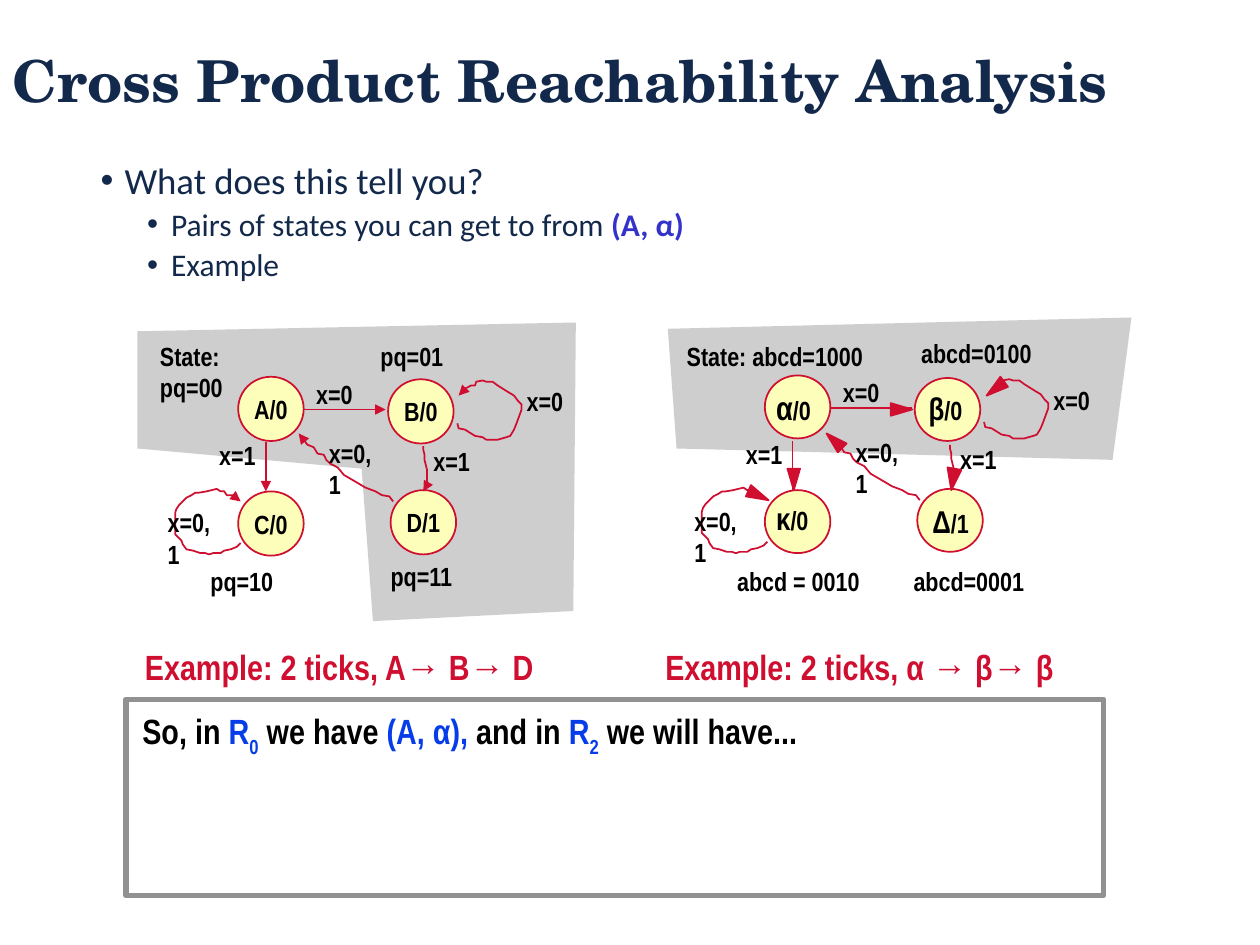
from pptx import Presentation
from pptx.dml.color import RGBColor
from pptx.enum.shapes import MSO_CONNECTOR, MSO_SHAPE
from pptx.enum.text import MSO_ANCHOR, MSO_AUTO_SIZE, PP_ALIGN
from pptx.oxml.ns import qn
from pptx.util import Pt
from lxml.etree import SubElement

PX = 9144
HUE = {"navy": "13294B", "link": "3333CC", "gray": "CECECE", "cream": "FCFEB9",
       "red": "CF0E30", "black": "000000", "edge": "919191", "blue": "063DE8"}
NARROW, SANS, SERIF = "Arial Narrow", "Calibri", "TeX Gyre Schola"

LINES = [((132, 69), (197, 69)), ((102, 95), (102, 134))]
CURVES = [
    [(227, 98), (227, 101), (228, 105), (228, 109), (230, 117), (230, 124),
     (230, 131), (230, 134), (227, 134)],
    [(254, 80), (255, 84), (260, 85), (268, 90), (274, 91), (277, 93), (286, 93),
     (293, 91), (296, 90), (299, 85), (301, 80), (305, 69), (305, 65), (302, 62),
     (299, 58), (294, 55), (286, 50), (282, 47), (277, 47), (274, 46), (269, 47),
     (268, 50), (265, 50), (261, 52), (257, 55), (255, 58)],
    [(82, 175), (79, 178), (74, 180), (69, 181), (66, 183), (60, 183), (57, 184),
     (54, 183), (50, 183), (44, 181), (39, 180), (36, 176), (35, 173), (30, 168),
     (30, 151), (31, 148), (33, 145), (36, 142), (39, 139), (43, 137), (46, 135),
     (49, 135), (55, 134), (63, 132), (66, 134), (69, 134), (71, 137), (76, 137),
     (79, 140), (82, 142)],
    [(203, 142), (200, 138), (194, 137), (189, 134), (181, 131), (176, 128),
     (164, 121), (159, 115), (153, 112), (150, 109), (148, 105), (143, 104),
     (140, 99), (135, 97), (132, 93), (129, 91), (128, 88)],
]
HEADS = [
    [(197, 70), (180, 65), (180, 75)], [(103, 134), (108, 117), (98, 117)],
    [(228, 134), (236, 118), (225, 116)], [(256, 59), (273, 52), (267, 44)],
    [(83, 142), (69, 130), (65, 139)], [(129, 89), (138, 104), (145, 97)],
]
NODES = [(80, 43), (199, 45), (80, 134), (201, 133)]
EDGES = [("x=0", 300, 46, 47), ("x=1", 56, 89, 47), ("x=0", 133, 40, 47),
         ("x=0,1", 15, 142, 61), ("x=1", 226, 93, 47), ("x=0,1", 143, 87, 61)]


def tint(name):
    return RGBColor.from_string(HUE[name])


def paint(shape, fill=None, line=None, width=1):
    shape.shadow.inherit = False
    if fill:
        shape.fill.solid()
        shape.fill.fore_color.rgb = tint(fill)
    else:
        shape.fill.background()
    if line:
        shape.line.color.rgb = tint(line)
        shape.line.width = Pt(width)
    else:
        shape.line.fill.background()


def style(run, size, hue="black", face=NARROW, bold=True):
    font = run.font
    font.size, font.name, font.bold = Pt(size), face, bold
    font.color.rgb = tint(hue)


def pad(frame, wide, high):
    frame.margin_left = frame.margin_right = wide * PX
    frame.margin_top = frame.margin_bottom = high * PX


def place(slide, box, wrap=False):
    frame = slide.shapes.add_textbox(*[n * PX for n in box]).text_frame
    frame.word_wrap = wrap
    if not wrap:
        frame.auto_size = MSO_AUTO_SIZE.SHAPE_TO_FIT_TEXT
    return frame


def label(slide, box, text, size=15, hue="black"):
    frame = place(slide, box)
    pad(frame, 9, 4)
    frame.text = text
    style(frame.paragraphs[0].runs[0], size, hue)
    return frame.paragraphs[0]


def trace(slide, spots, closed):
    pen = slide.shapes.build_freeform(*spots[0], scale=PX)
    pen.add_line_segments(spots[1:], close=closed)
    return pen.convert_to_shape()


def tip(shape):
    SubElement(shape.line._get_or_add_ln(), qn("a:tailEnd"), type="triangle")


def arrow(slide, start, end, tail):
    (x, y), (u, v) = start, end
    line = slide.shapes.add_connector(
        MSO_CONNECTOR.STRAIGHT, x * PX, y * PX, u * PX, v * PX)
    line.line.color.rgb = tint("red")
    line.line.width = Pt(1)
    if tail:
        tip(line)
    SubElement(line._element.spPr, qn("a:effectLst"))


def machine(slide, left, top, zone, names, notes, big=False):
    def shift(spots):
        return [(left + x, top + y) for x, y in spots]

    paint(trace(slide, shift(zone), True), "gray")
    for spot, name in zip(shift(NODES), names):
        box = (*spot, 52, 50 if big else 51)
        node = slide.shapes.add_shape(MSO_SHAPE.OVAL, *[n * PX for n in box])
        paint(node, "cream", "red")
        if not big:
            frame = node.text_frame
            frame.word_wrap = False
            frame.vertical_anchor = MSO_ANCHOR.MIDDLE
            pad(frame, 9, 4)
            frame.text = name
            frame.paragraphs[0].alignment = PP_ALIGN.CENTER
            style(frame.paragraphs[0].runs[0], 15)
    for ends in LINES:
        arrow(slide, *shift(ends), not big)
    for curve in CURVES:
        path = trace(slide, shift(curve[:-4] if big else curve), False)
        paint(path, None, "red")
        if not big:
            tip(path)
    if big:
        for head in HEADS:
            paint(trace(slide, shift(head), True), "red", "red")
        for text, size, x, y, wide, high in names:
            para = label(slide, (left + x, top + y, wide, high), text, size)
            run = para.add_run()
            run.text = "/1" if text == "Δ" else "/0"
            style(run, 15)
    for text, x, y, wide in notes + EDGES:
        label(slide, (left + x, top + y, wide, 34), text)


def title(slide, box):
    frame = place(slide, box, True)
    frame.vertical_anchor = MSO_ANCHOR.MIDDLE
    frame.text = "Cross Product Reachability Analysis"
    para = frame.paragraphs[0]
    para.line_spacing = 0.9
    style(para.runs[0], 33, "navy", SERIF)


def points(slide, box):
    frame = place(slide, box, True)
    frame.text = "What does this tell you?\nPairs of states you can get to from\nExample"
    for i, para in enumerate(frame.paragraphs):
        props = para._p.get_or_add_pPr()
        props.set("marL", str((56 if i else 19) * PX))
        props.set("indent", str(-19 * PX))
        SubElement(props, qn("a:buFont"), typeface="Arial")
        SubElement(props, qn("a:buChar"), char="•")
        para.line_spacing = 0.9
        if i:
            para.level = 1
            para.space_before = Pt(3.8)
        style(para.runs[0], 18 if i else 21, "navy", SANS, False)
    run = frame.paragraphs[1].add_run()
    run.text = " (A, α)"
    style(run, 18, "link", SANS)


def answer(slide, left, top, wide, high):
    rect = slide.shapes.add_shape(
        MSO_SHAPE.RECTANGLE, left * PX, top * PX, wide * PX, high * PX)
    paint(rect, None, "edge", 3)
    para = label(slide, (left + 4, top + 4, 544, 41), "So, in ", 20)
    parts = [("R", "blue"), ("0", "blue"), (" we have ", "black"), ("(A, α),", "blue"),
             (" and in ", "black"), ("R", "blue"), ("2", "blue"),
             (" we will have...", "black")]
    for text, hue in parts:
        run = para.add_run()
        run.text = text
        style(run, 20, hue)
        if text.isdigit():
            run._r.get_or_add_rPr().set("baseline", "-30000")


def main():
    deck = Presentation()
    deck.slide_width, deck.slide_height = 1000 * PX, 750 * PX
    slide = deck.slides.add_slide(deck.slide_layouts[6])
    title(slide, (0, 25, 1000, 83))
    points(slide, (70, 124, 864, 569))
    machine(slide, 109, 256,
            [(0, 7), (0, 100), (178, 116), (187, 237), (346, 229), (348, 0)],
            ["A/0", "B/0", "C/0", "D/1"],
            [("State: pq=00", 9, 10, 120), ("pq=01", 184, 10, 70),
             ("pq=10", 49, 189, 70), ("pq=11", 192, 185, 70)])
    machine(slide, 527, 255,
            [(3, 6), (10, 101), (356, 110), (371, -3)],
            [("α", 19, 80, 48, 46, 40), ("β", 18, 201, 50, 45, 38),
             ("κ", 18, 80, 137, 44, 38), ("Δ", 18, 204, 139, 49, 38)],
            [("State: abcd=1000", 9, 11, 159), ("abcd=0100", 195, 9, 108),
             ("abcd = 0010", 49, 190, 118), ("abcd=0001", 189, 190, 108)], True)
    label(slide, (106, 508, 329, 41), "Example: 2 ticks, A→ B→ D", 20, "red")
    label(slide, (519, 508, 327, 41), "Example: 2 ticks, α → β→ β", 20, "red")
    answer(slide, 100, 555, 776, 156)
    deck.save("out.pptx")


if __name__ == "__main__":
    main()
